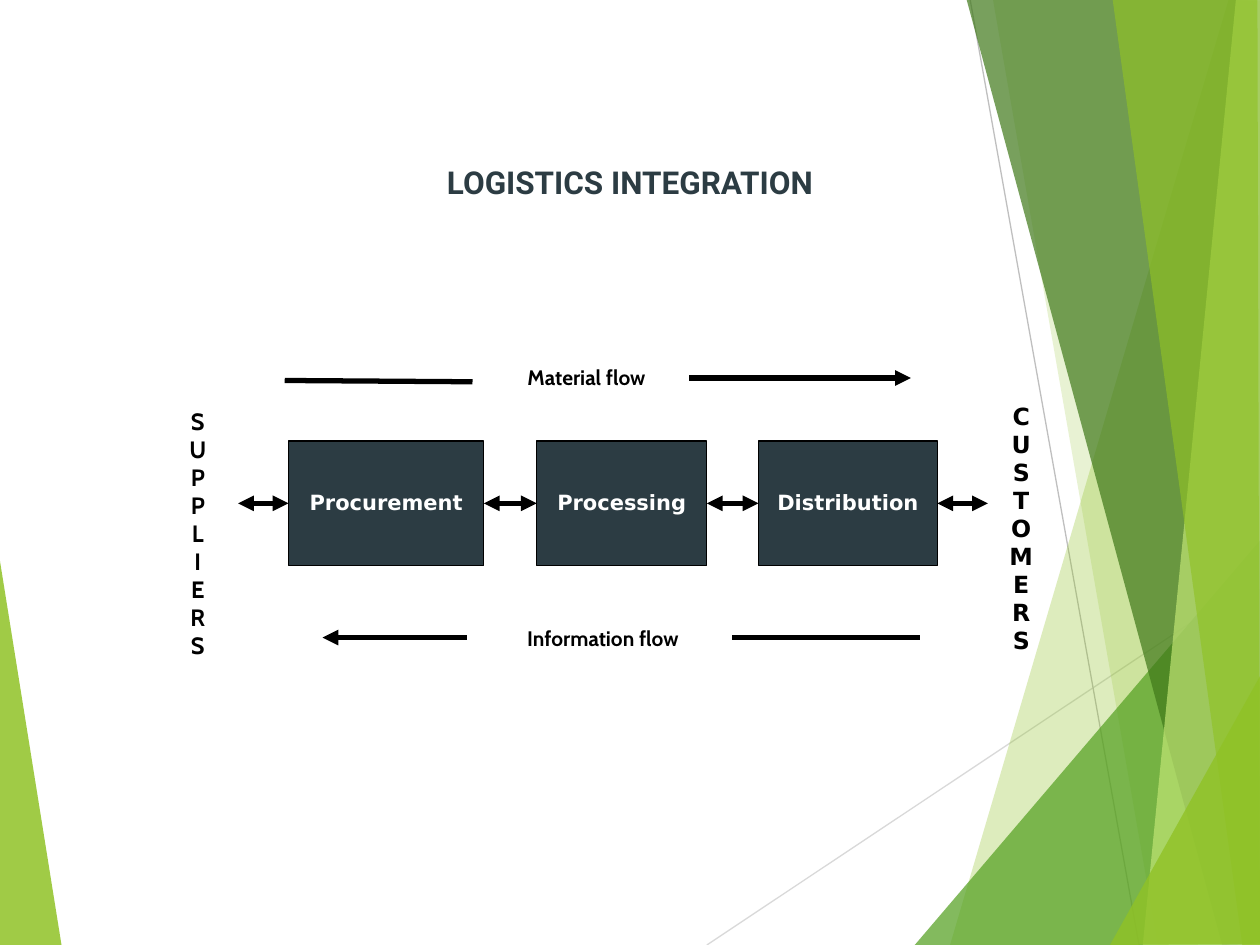
import pptx
import pptx.util
import pptx.dml.color
import pptx.enum.shapes
import pptx.enum.text
import pptx.oxml
import pptx.oxml.ns
from pptx.util import Inches

COLORS = {
    "lime": "90C226", "green": "54A021", "forest": "3F7819", "pale": "C0E474",
    "slate": "2C3C43", "black": "000000", "white": "FFFFFF",
    "light_gray": "D9D9D9", "gray": "BFBFBF",
}

LEFT_FACET = ("lime", 85, [(-0.01, 4.39), (0.49, 7.51), (-0.01, 7.5)])
BACKDROP_LINES = [
    ((5.61, 7.5), (10.01, 4.57), "light_gray"),
    ((7.7, 0), (9.04, 7.5), "gray"),
]
RIGHT_FACETS = [
    ("lime", 30, [(9.75, 0), (7.54, 7.5), (10.02, 7.51), (10.01, 0.01)]),
    ("lime", 20, [(7.88, -0.01), (9.19, 7.5), (10.01, 7.5), (10.01, -0.01)]),
    ("green", 72, [(7.26, 7.5), (10, 4.29), (10.01, 7.5)]),
    ("forest", 70, [(7.67, -0.01), (9.7, 7.5), (10.01, 7.49), (10.01, -0.01)]),
    ("pale", 70, [(9.81, -0.01), (9.07, 7.5), (10.01, 7.5), (10, -0.01)]),
    ("lime", 65, [(8.83, -0.01), (9.86, 7.5), (10, 7.5), (9.98, -0.01)]),
    ("lime", 80, [(8.81, 7.5), (10.01, 5.35), (10.01, 7.49)]),
]

STAGES = [
    ("Procurement", 2.29, 1.55),
    ("Processing", 4.26, 1.35),
    ("Distribution", 6.02, 1.42),
]
STAGE_TOP, STAGE_HEIGHT = 3.5, 0.99
STAGE_MIDDLE = STAGE_TOP + STAGE_HEIGHT / 2
END_ARROW = 0.4

LABELS = [
    ("\n".join("SUPPLIERS"), (1.14, 3.19, 0.86, 2.1), 13.5, "Cabin", "black"),
    ("\n".join("CUSTOMERS"), (7.64, 3.15, 0.93, 2.1), 13.5, "DejaVu Sans", "black"),
    ("Material flow", (3.31, 2.86, 2.69, 0.28), 12, "Cabin", "black"),
    ("Information flow", (3.44, 4.93, 2.69, 0.28), 12, "Cabin", "black"),
    ("LOGISTICS INTEGRATION", (0.94, 1.27, 8.12, 0.37), 18, "Roboto", "slate"),
]

FLOW_LINES = [
    ((2.26, 3.02), (3.75, 3.03), ()),
    ((5.47, 3), (7.23, 3), ("tailEnd",)),
    ((2.56, 5.06), (3.71, 5.06), ("headEnd",)),
    ((5.81, 5.06), (7.3, 5.06), ()),
]
BOTH_ENDS = ("headEnd", "tailEnd")


def rgb(name):
    return pptx.dml.color.RGBColor.from_string(COLORS[name])


def append_element(parent, tag, **attributes):
    element = pptx.oxml.parse_xml(f"<a:{tag} {pptx.oxml.ns.nsdecls('a')}/>")
    for key, value in attributes.items():
        element.set(key, value)
    parent.append(element)


def add_facet(shapes, color, opacity, points):
    corners = [(Inches(x), Inches(y)) for x, y in points]
    builder = shapes.build_freeform(*corners[0])
    builder.add_line_segments(corners[1:], close=True)
    facet = builder.convert_to_shape()
    facet.shadow.inherit = False
    facet.fill.solid()
    facet.fill.fore_color.rgb = rgb(color)
    facet.line.fill.background()
    solid = facet.fill._xPr.find(pptx.oxml.ns.qn("a:solidFill"))
    append_element(solid[0], "alpha", val=str(opacity * 1000))


def add_line(shapes, start, end, color="black", width=3, arrows=()):
    line = shapes.add_connector(
        pptx.enum.shapes.MSO_CONNECTOR.STRAIGHT, *map(Inches, start + end))
    line.line.color.rgb = rgb(color)
    line.line.width = pptx.util.Pt(width)
    for arrow in arrows:
        append_element(line.line._get_or_add_ln(), arrow, type="triangle")
    append_element(line._element.spPr, "effectLst")
    return line


def set_text(shape, text, size, font, color):
    frame = shape.text_frame
    frame.word_wrap = True
    frame.vertical_anchor = pptx.enum.text.MSO_ANCHOR.MIDDLE
    frame.margin_left = frame.margin_right = Inches(0.07)
    frame.margin_top = frame.margin_bottom = Inches(0.04)
    frame.text = text
    for paragraph in frame.paragraphs:
        paragraph.alignment = pptx.enum.text.PP_ALIGN.CENTER
        paragraph.line_spacing = 0.99
        paragraph.font.size = pptx.util.Pt(size)
        paragraph.font.name = font
        paragraph.font.bold = True
        paragraph.font.color.rgb = rgb(color)


def add_stage(shapes, name, left, width):
    stage = shapes.add_shape(
        pptx.enum.shapes.MSO_SHAPE.RECTANGLE,
        *map(Inches, (left, STAGE_TOP, width, STAGE_HEIGHT)))
    stage.shadow.inherit = False
    stage.fill.solid()
    stage.fill.fore_color.rgb = rgb("slate")
    stage.line.color.rgb = rgb("black")
    stage.line.width = pptx.util.Pt(0.75)
    set_text(stage, name, 12, "DejaVu Sans", "white")
    return stage


def main():
    deck = pptx.Presentation()
    deck.slide_width, deck.slide_height = Inches(10), Inches(7.5)
    shapes = deck.slides.add_slide(deck.slide_layouts[6]).shapes

    add_facet(shapes, *LEFT_FACET)
    for start, end, color in BACKDROP_LINES:
        add_line(shapes, start, end, color, 0.75)
    for facet in RIGHT_FACETS:
        add_facet(shapes, *facet)

    stages = [add_stage(shapes, *stage) for stage in STAGES]

    left_edges = [left for _, left, _ in STAGES]
    right_edges = [left + width for _, left, width in STAGES]
    starts = [left_edges[0] - END_ARROW] + right_edges
    ends = left_edges + [right_edges[-1] + END_ARROW]
    for start, end, before, after in zip(starts, ends, [None] + stages, stages + [None]):
        link = add_line(shapes, (start, STAGE_MIDDLE), (end, STAGE_MIDDLE), arrows=BOTH_ENDS)
        if before:
            link.begin_connect(before, 3)
        if after:
            link.end_connect(after, 1)

    for text, place, size, font, color in LABELS:
        set_text(shapes.add_textbox(*map(Inches, place)), text, size, font, color)
    for start, end, arrows in FLOW_LINES:
        add_line(shapes, start, end, arrows=arrows)

    deck.save("out.pptx")


if __name__ == "__main__":
    main()
